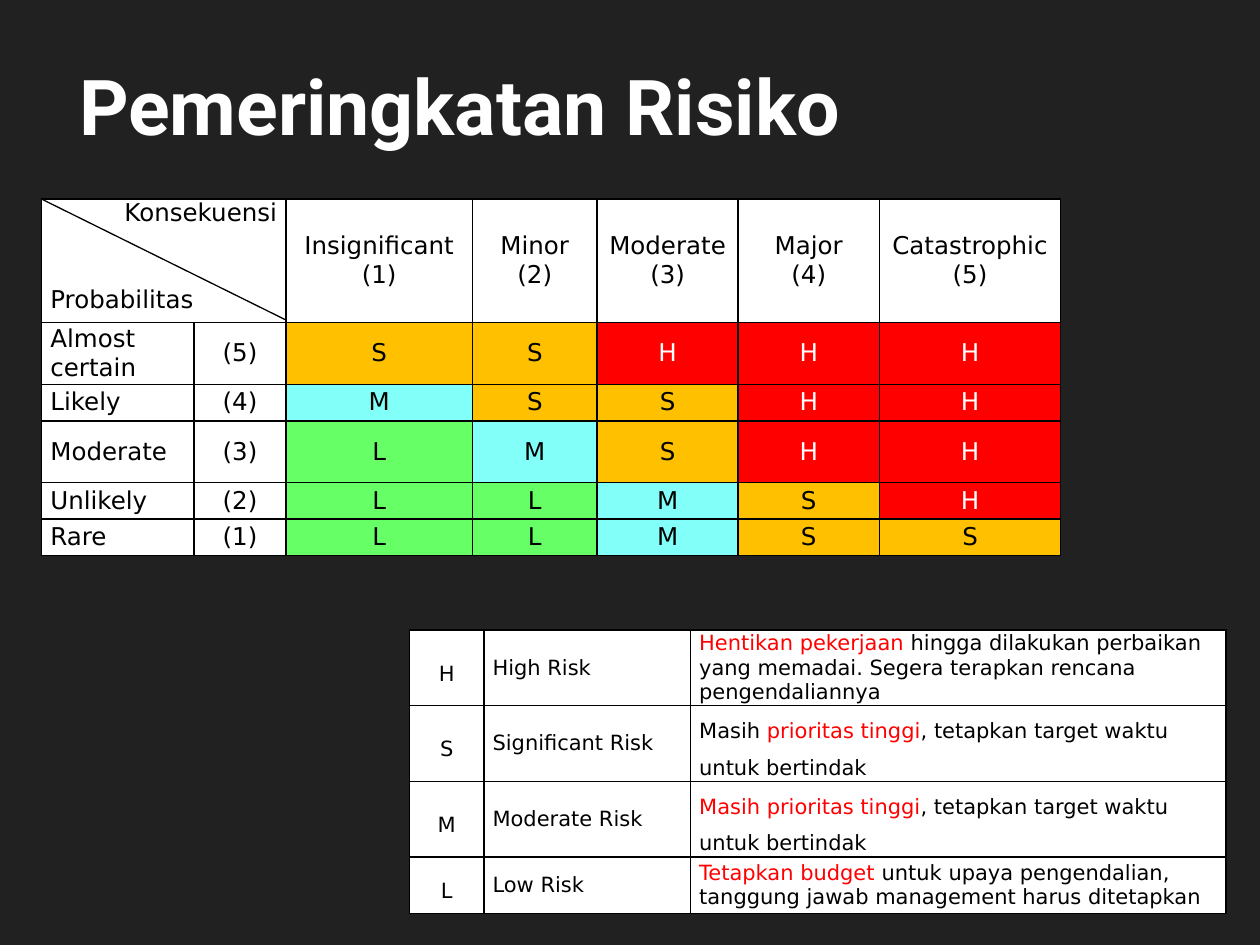
from dataclasses import dataclass

from lxml import etree
from pptx import Presentation
from pptx.dml.color import RGBColor
from pptx.enum.shapes import MSO_CONNECTOR
from pptx.enum.text import MSO_ANCHOR, PP_ALIGN
from pptx.oxml.ns import qn
from pptx.util import Inches, Pt

LEFT, CENTER, RIGHT, JUSTIFY = PP_ALIGN.LEFT, PP_ALIGN.CENTER, PP_ALIGN.RIGHT, PP_ALIGN.JUSTIFY
TOP, MIDDLE, BOTTOM = MSO_ANCHOR.TOP, MSO_ANCHOR.MIDDLE, MSO_ANCHOR.BOTTOM
BLACK, WHITE, RED = "000000", "FFFFFF", "FF0000"
BODY_FONT = "DejaVu Sans"
RISK_FILL = {"H": RED, "S": "FFC000", "M": "82FFF8", "L": "66FF66"}


@dataclass
class Run:
    text: str
    color: str = BLACK


@dataclass
class Para:
    runs: list[Run]
    align: PP_ALIGN = LEFT
    spacing: float = 1.0
    before: float = 0
    after: float = 0


@dataclass
class Likelihood:
    name: str
    score: int
    risks: str
    height: float


@dataclass
class Action:
    level: str
    name: str
    runs: list[Run]
    height: float
    loose: bool = False


CONSEQUENCES = [("Insignificant", 1.48), ("Minor", 0.99), ("Moderate", 1.12),
                ("Major", 1.12), ("Catastrophic", 1.44)]
LIKELIHOODS = [
    Likelihood("Almost certain", 5, "SSHHH", 0.49),
    Likelihood("Likely", 4, "MSSHH", 0.29),
    Likelihood("Moderate", 3, "LMSHH", 0.49),
    Likelihood("Unlikely", 2, "LLMSH", 0.29),
    Likelihood("Rare", 1, "LLMSS", 0.29),
]
TARGET = Run(", tetapkan target waktu untuk bertindak")
ACTIONS = [
    Action("H", "High Risk", [
        Run("Hentikan pekerjaan", RED),
        Run(" hingga dilakukan perbaikan yang memadai. Segera terapkan rencana pengendaliannya"),
    ], 0.6),
    Action("S", "Significant Risk",
           [Run("Masih "), Run("prioritas tinggi", RED), TARGET], 0.59, True),
    Action("M", "Moderate Risk", [Run("Masih prioritas tinggi", RED), TARGET], 0.59, True),
    Action("L", "Low Risk", [
        Run("Tetapkan budget ", RED),
        Run("untuk upaya pengendalian, tanggung jawab management harus ditetapkan"),
    ], 0.45),
]


def rgb(color: str) -> RGBColor:
    return RGBColor.from_string(color)


def add_run(p, run: Run, size: float, font: str = BODY_FONT):
    r = p.add_run()
    r.text = run.text
    r.font.size = Pt(size)
    r.font.name = font
    r.font.color.rgb = rgb(run.color)
    return r


def set_borders(cell, color: str = BLACK, width: float = 1) -> None:
    tc_pr = cell._tc.get_or_add_tcPr()
    for i, side in enumerate(("a:lnL", "a:lnR", "a:lnT", "a:lnB")):
        ln = etree.Element(qn(side), w=str(Pt(width)))
        fill = etree.SubElement(ln, qn("a:solidFill"))
        etree.SubElement(fill, qn("a:srgbClr"), val=color)
        tc_pr.insert(i, ln)


def fill_cell(cell, paras: list[Para], size: float, fill: str = WHITE,
              anchor: MSO_ANCHOR = MIDDLE) -> None:
    cell.fill.solid()
    cell.fill.fore_color.rgb = rgb(fill)
    cell.margin_left = cell.margin_right = Inches(0.07)
    cell.margin_top = cell.margin_bottom = 0
    cell.vertical_anchor = anchor
    tf = cell.text_frame
    for i, para in enumerate(paras):
        p = tf.add_paragraph() if i else tf.paragraphs[0]
        p.alignment = para.align
        p.line_spacing = para.spacing
        p.space_before, p.space_after = Pt(para.before), Pt(para.after)
        for run in para.runs:
            add_run(p, run, size)


def add_grid(s, left: float, top: float, widths: list[float], heights: list[float]):
    """Add a plain table with black cell borders."""
    table = s.shapes.add_table(len(heights), len(widths), Inches(left), Inches(top),
                               Inches(sum(widths)), Inches(sum(heights))).table
    table.first_row = table.horz_banding = False
    for col, width in zip(table.columns, widths):
        col.width = Inches(width)
    for row, height in zip(table.rows, heights):
        row.height = Inches(height)
    for cell in table.iter_cells():
        set_borders(cell)
    return table


def add_title(s, text: str) -> None:
    sp = s.shapes.add_textbox(Inches(0.53), Inches(0.38), Inches(9), Inches(0.87))
    tf = sp.text_frame
    tf.word_wrap = True
    tf.vertical_anchor = BOTTOM
    r = add_run(tf.paragraphs[0], Run(text, WHITE), 44, "Roboto")
    r.font.bold = True
    effects = etree.Element(qn("a:effectLst"))
    shadow = etree.SubElement(effects, qn("a:outerShdw"), blurRad=str(Pt(3)),
                              dist=str(Pt(3)), dir="2700000", algn="tl")
    color = etree.SubElement(shadow, qn("a:srgbClr"), val=BLACK)
    etree.SubElement(color, qn("a:alpha"), val="43000")
    r.font._element.find(qn("a:solidFill")).addnext(effects)


def add_matrix(s) -> None:
    size, left, top, head = 14, 0.33, 1.58, 0.98
    label_widths = [1.21, 0.73]
    table = add_grid(s, left, top, label_widths + [width for _, width in CONSEQUENCES],
                     [head] + [row.height for row in LIKELIHOODS])
    corner = table.cell(0, 0)
    corner.merge(table.cell(0, 1))
    fill_cell(corner, [Para([Run("Konsekuensi")], RIGHT),
                       Para([Run("Probabilitas")], JUSTIFY, before=33)], size, anchor=TOP)
    for i, (name, _) in enumerate(CONSEQUENCES):
        fill_cell(table.cell(0, i + 2),
                  [Para([Run(text)], CENTER) for text in (name, f"({i + 1})")], size)
    for y, row in enumerate(LIKELIHOODS, 1):
        fill_cell(table.cell(y, 0), [Para([Run(row.name)], JUSTIFY)], size)
        fill_cell(table.cell(y, 1), [Para([Run(f"({row.score})")], CENTER)], size)
        for x, level in enumerate(row.risks, 2):
            color = WHITE if level == "H" else BLACK
            fill_cell(table.cell(y, x), [Para([Run(level, color)], CENTER)],
                      size, RISK_FILL[level])

    diagonal = s.shapes.add_connector(MSO_CONNECTOR.STRAIGHT, Inches(left), Inches(top),
                                      Inches(left + sum(label_widths)), Inches(2.54))
    diagonal.line.color.rgb = rgb(BLACK)
    diagonal.line.width = Pt(0.75)
    etree.SubElement(diagonal._element.spPr, qn("a:effectLst"))


def add_actions(s) -> None:
    size = 12
    table = add_grid(s, 3.25, 5, [0.59, 1.64, 4.25], [a.height for a in ACTIONS])
    for y, action in enumerate(ACTIONS):
        text = Para(action.runs, spacing=1.5, after=6) if action.loose else Para(action.runs)
        fill_cell(table.cell(y, 0), [Para([Run(action.level)], CENTER, 1.5, after=6)], size)
        fill_cell(table.cell(y, 1), [Para([Run(action.name)])], size)
        fill_cell(table.cell(y, 2), [text], size)


def main() -> None:
    prs = Presentation()
    prs.slide_width, prs.slide_height = Inches(10), Inches(7.5)
    s = prs.slides.add_slide(prs.slide_layouts[6])
    s.background.fill.solid()
    s.background.fill.fore_color.rgb = rgb("212121")
    add_title(s, "Pemeringkatan Risiko")
    add_matrix(s)
    add_actions(s)
    prs.save("out.pptx")


if __name__ == "__main__":
    main()
